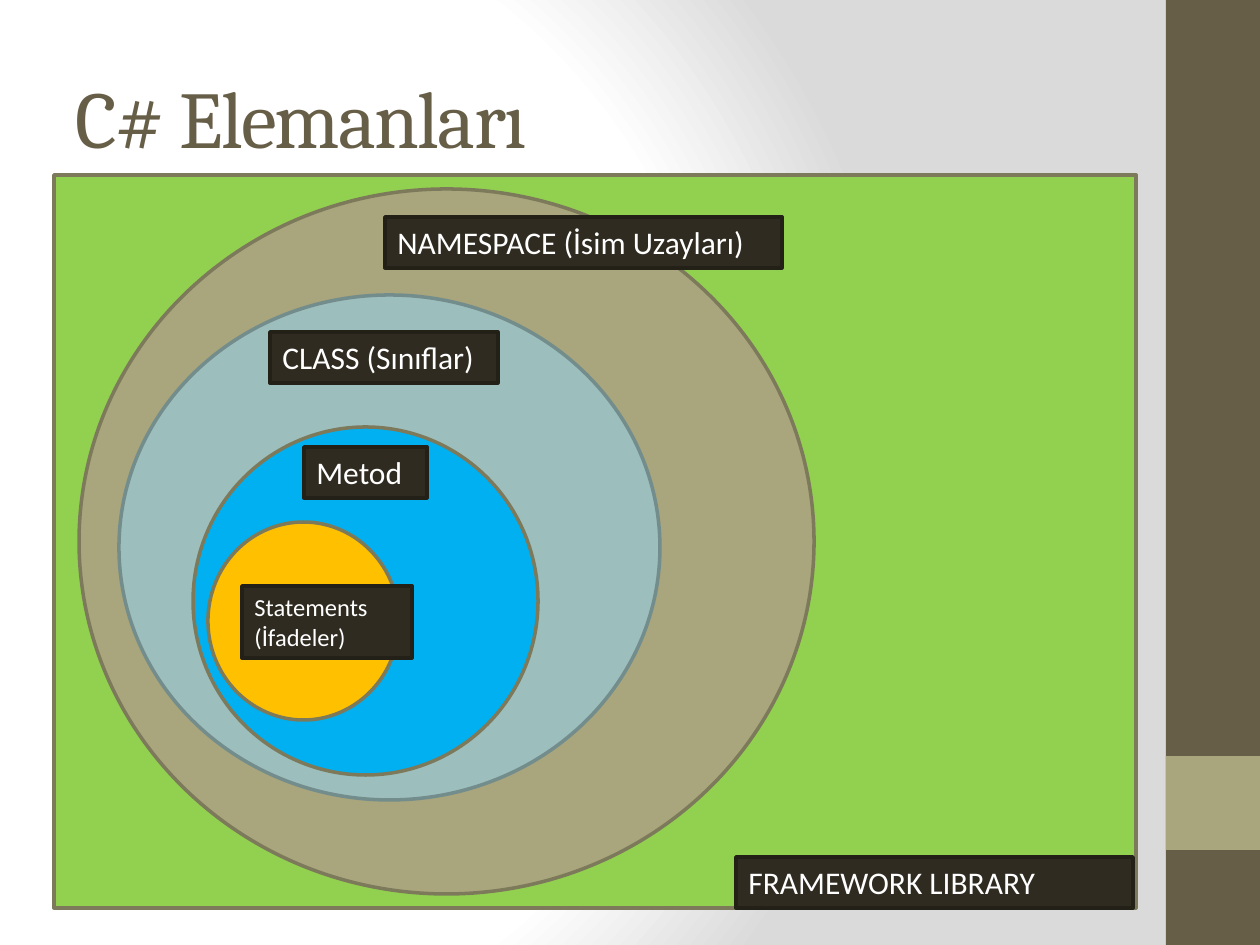
from pptx import Presentation
from pptx.dml.color import RGBColor
from pptx.enum.shapes import MSO_SHAPE
from pptx.enum.text import MSO_ANCHOR, MSO_AUTO_SIZE, PP_ALIGN
from pptx.oxml import parse_xml
from pptx.oxml.ns import nsdecls
from pptx.util import Emu, Pt

PX_PER_INCH = 126
SLIDE_W, SLIDE_H = 1260, 945
SIDEBAR_LEFT, SIDEBAR_W = 1166, 94

COLORS = {
    "brown": "675E47",
    "khaki": "A9A57C",
    "outline": "7D7A5C",
    "green": "92D050",
    "teal": "9CBEBD",
    "teal_outline": "738D8C",
    "blue": "00B0F0",
    "amber": "FFC000",
    "label": "2F2B20",
    "label_outline": "232018",
    "white": "FFFFFF",
    "grey": "DADADA",
}


def px(length):
    return Emu(round(length * 914400 / PX_PER_INCH))


def rgb(name):
    return RGBColor.from_string(COLORS[name])


def set_background(slide):
    """Give the slide a radial gradient from white to grey."""
    stops = "".join(
        f'<a:gs pos="{percent * 1000}"><a:srgbClr val="{COLORS[name]}"/></a:gs>'
        for percent, name in ((0, "white"), (75, "white"), (100, "grey"))
    )
    slide.element.cSld.insert(0, parse_xml(
        f'<p:bg {nsdecls("p", "a")}><p:bgPr><a:gradFill rotWithShape="1">'
        f'<a:gsLst>{stops}</a:gsLst><a:path path="circle">'
        '<a:fillToRect l="20000" t="50000" r="100000" b="50000"/></a:path>'
        '</a:gradFill><a:effectLst/></p:bgPr></p:bg>'
    ))


def add_area(slide, preset, box, fill, outline=None):
    area = slide.shapes.add_shape(preset, *map(px, box))
    area.shadow.inherit = False
    area.fill.solid()
    area.fill.fore_color.rgb = rgb(fill)
    if outline:
        area.line.color.rgb = rgb(outline)
        area.line.width = Pt(2)
    else:
        area.line.fill.background()
    return area


def write_text(holder, text, *, size, font="Calibri", color="white",
               anchor=MSO_ANCHOR.TOP, fit=MSO_AUTO_SIZE.NONE, spacing=None):
    frame = holder.text_frame
    frame.word_wrap = True
    frame.auto_size = fit
    frame.vertical_anchor = anchor
    paragraph = frame.paragraphs[0]
    paragraph.alignment = PP_ALIGN.LEFT
    run = paragraph.add_run()
    run.text = text
    run.font.size = Pt(size)
    run.font.name = font
    run.font.color.rgb = rgb(color)
    if spacing is not None:
        run.font._element.set("spc", str(spacing * 100))


def add_label(slide, text, box, size=18):
    label = add_area(slide, MSO_SHAPE.RECTANGLE, box, "label", "label_outline")
    write_text(label, text, size=size, fit=MSO_AUTO_SIZE.SHAPE_TO_FIT_TEXT)


def add_title(slide, text):
    title = slide.shapes.add_textbox(*map(px, (63, 38, 1050, 157)))
    write_text(title, text, size=46, font="Cambria", color="brown",
               anchor=MSO_ANCHOR.MIDDLE, spacing=-1)


def main():
    presentation = Presentation()
    presentation.slide_width, presentation.slide_height = px(SLIDE_W), px(SLIDE_H)
    slide = presentation.slides.add_slide(presentation.slide_layouts[6])
    set_background(slide)

    for top, height, fill in ((0, SLIDE_H, "brown"), (756, SIDEBAR_W, "khaki")):
        add_area(slide, MSO_SHAPE.RECTANGLE,
                 (SIDEBAR_LEFT, top, SIDEBAR_W, height), fill)

    add_area(slide, MSO_SHAPE.RECTANGLE, (54, 175, 1082, 733), "green", "outline")
    add_title(slide, "C# Elemanları")

    nested_scopes = (
        ((79, 189, 735, 705), "khaki", "outline"),
        ((119, 295, 541, 505), "teal", "teal_outline"),
        ((193, 427, 345, 348), "blue", "outline"),
        ((208, 522, 191, 198), "amber", "outline"),
    )
    for box, fill, outline in nested_scopes:
        add_area(slide, MSO_SHAPE.OVAL, box, fill, outline)

    add_label(slide, "NAMESPACE (İsim Uzayları)", (385, 217, 397, 51))
    add_label(slide, "CLASS (Sınıflar)", (270, 332, 228, 51))
    add_label(slide, "Metod", (304, 447, 123, 51))
    add_label(slide, "Statements (İfadeler)", (242, 586, 170, 72), size=14)
    add_label(slide, "FRAMEWORK LIBRARY", (736, 857, 397, 51))

    presentation.save("out.pptx")


if __name__ == "__main__":
    main()
